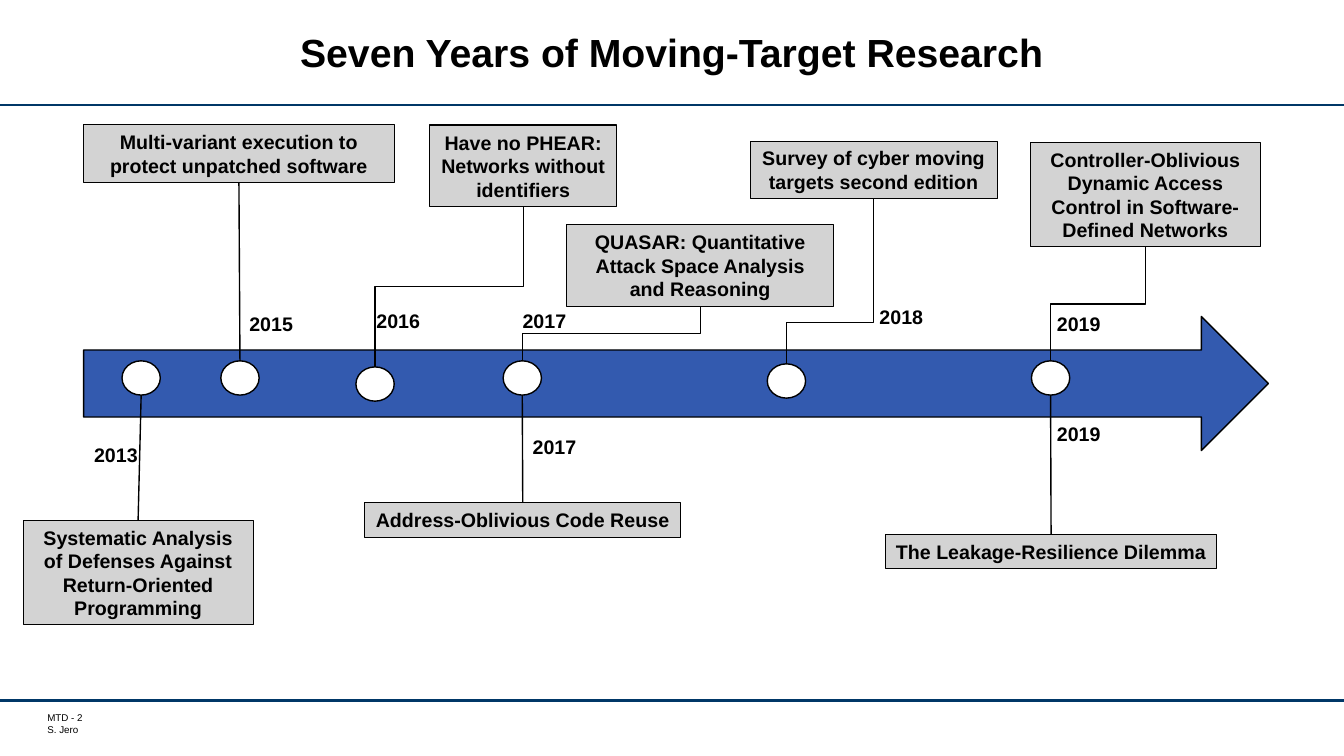
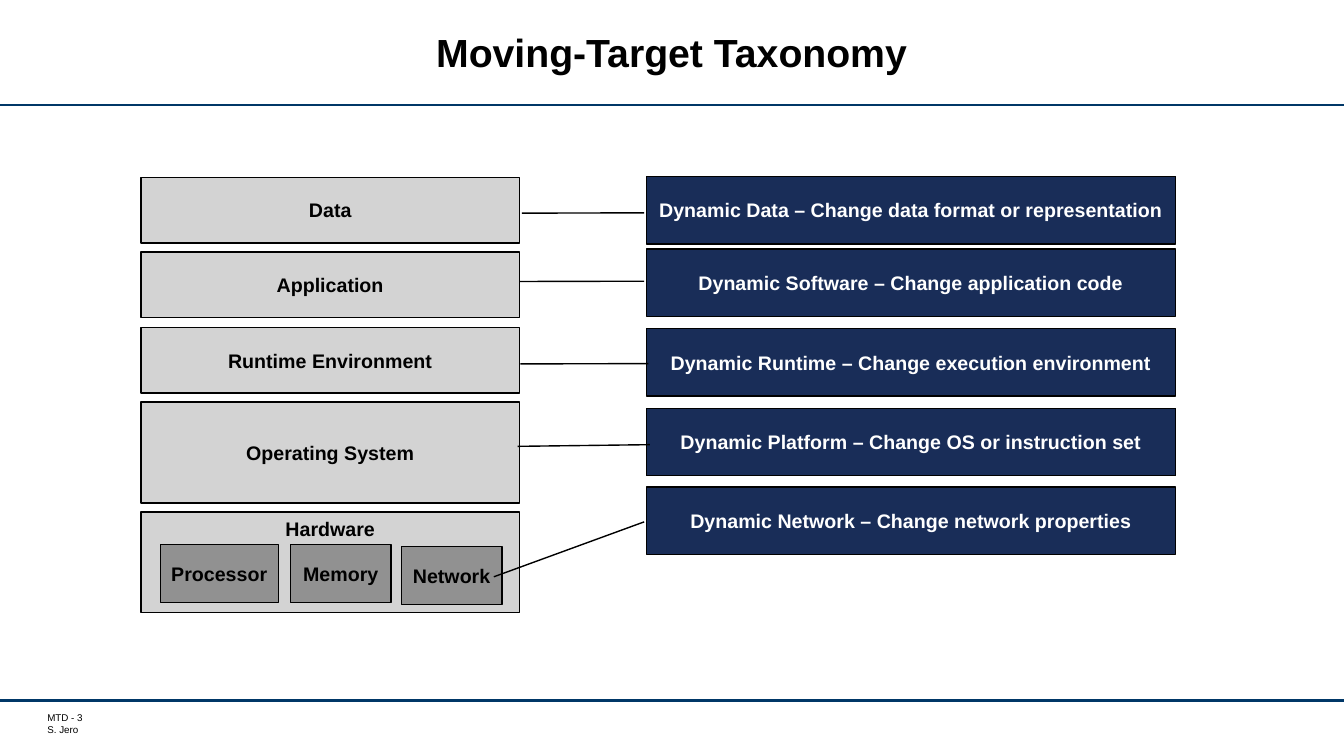
from lxml import etree
from pptx import Presentation
from pptx.dml.color import RGBColor
from pptx.enum.shapes import MSO_CONNECTOR, MSO_SHAPE
from pptx.enum.text import MSO_ANCHOR, MSO_AUTO_SIZE, PP_ALIGN
from pptx.oxml.ns import qn
from pptx.util import Inches, Pt

BLACK = RGBColor(0x00, 0x00, 0x00)
WHITE = RGBColor(0xFF, 0xFF, 0xFF)
RULE_BLUE = RGBColor(0x00, 0x37, 0x67)
ARROW_BLUE = RGBColor(0x33, 0x5A, 0xAF)
NAVY = RGBColor(0x19, 0x2D, 0x58)
LIGHT_GREY = RGBColor(0xD3, 0xD3, 0xD3)
MID_GREY = RGBColor(0x91, 0x91, 0x91)
FONT = "Arial"
PAGE_WIDTH, PAGE_HEIGHT = 13.33, 7.5

MARKER_WIDTH, MARKER_HEIGHT = 0.38, 0.34
YEAR_WIDTH, YEAR_HEIGHT = 0.64, 0.34
# Left and top of each marker
MARKERS = {
    "2013": (0.98, 2.34),
    "2015": (1.96, 2.34),
    "2016": (3.3, 2.4),
    "2017": (4.76, 2.34),
    "2018": (7.38, 2.37),
    "2019": (10, 2.34),
}
# Year, text, box, place of the year label, share of the drop above the bend
EVENTS = [
    ("2013", "Systematic Analysis of Defenses Against Return-Oriented Programming",
     (0, 3.92, 2.28, 1.04), (0.6, 3.1), 0.5),
    ("2015", "Multi-variant execution to protect unpatched software",
     (0.6, 0, 3.08, 0.57), (2.14, 1.81), 0.5),
    ("2016", "Have no PHEAR: Networks without identifiers",
     (4.03, 0, 1.86, 0.81), (3.4, 1.78), 0.5),
    ("2017", "QUASAR: Quantitative Attack Space Analysis and Reasoning",
     (5.39, 0.99, 2.65, 0.81), (4.85, 1.78), 0.5),
    ("2017", "Address-Oblivious Code Reuse",
     (3.39, 3.75, 3.13, 0.34), (4.95, 3.03), 0.5),
    ("2018", "Survey of cyber moving targets second edition",
     (7.21, 0.16, 2.45, 0.57), (8.39, 1.74), 0.75),
    ("2019", "Controller-Oblivious Dynamic Access Control in Software-Defined Networks",
     (9.99, 0.17, 2.28, 1.04), (10.15, 1.81), 0.5),
    ("2019", "The Leakage-Resilience Dilemma",
     (8.55, 4.06, 3.29, 0.34), (10.15, 2.9), 0.5),
]

# Text, top, height
LAYERS = [
    ("Data", 0.01, 0.65),
    ("Application", 0.75, 0.65),
    ("Runtime Environment", 1.5, 0.65),
    ("Operating System", 2.24, 1),
    ("Hardware", 3.33, 1),
]
# Text, left, top, width
HARDWARE_PARTS = [
    ("Processor", 0.19, 3.65, 1.17),
    ("Memory", 1.48, 3.65, 1),
    ("Network", 2.58, 3.67, 1),
]
# Text, top, leader as (start y, start x, end y, end x) in shares of the box
TECHNIQUES = [
    ("Dynamic Data – Change data format or representation", 0,
     (0.54, -0.004, 0.545, -0.235)),
    ("Dynamic Software – Change application code", 0.72,
     (0.478, -0.004, 0.482, -0.24)),
    ("Dynamic Runtime – Change execution environment", 1.51,
     (0.519, 0.004, 0.524, -0.238)),
    ("Dynamic Platform – Change OS or instruction set", 2.3,
     (0.54, 0.007, 0.565, -0.243)),
    ("Dynamic Network – Change network properties", 3.08,
     (0.519, -0.004, 1.332, -0.288)),
]


def write(para, text, size=14, color=BLACK, bold=True, align=PP_ALIGN.CENTER):
    para.alignment = align
    span = para.add_run()
    span.text = text
    span.font.name = FONT
    span.font.size = Pt(size)
    span.font.bold = bold
    span.font.color.rgb = color


def add_box(page, kind, box, fill, text="", color=BLACK, weight=1, wrap=True):
    shape = page.shapes.add_shape(kind, *map(Inches, box))
    shape.shadow.inherit = False
    shape.fill.solid()
    shape.fill.fore_color.rgb = fill
    shape.line.color.rgb = BLACK
    shape.line.width = Pt(weight)
    if text:
        frame = shape.text_frame
        frame.word_wrap = wrap
        frame.vertical_anchor = MSO_ANCHOR.MIDDLE
        write(frame.paragraphs[0], text, color=color)
    return shape


def add_line(page, kind, start, end, color=BLACK, weight=1):
    line = page.shapes.add_connector(kind, *map(Inches, start + end))
    line.line.color.rgb = color
    line.line.width = Pt(weight)
    etree.SubElement(line._element.spPr, qn("a:effectLst"))
    return line


def add_elbow(page, start, end, bend):
    """Draw a line that drops, runs left and drops again."""
    run, drop = start[0] - end[0], end[1] - start[1]
    left = (start[0] + end[0] - drop) / 2
    top = (start[1] + end[1] - run) / 2
    elbow = add_line(page, MSO_CONNECTOR.ELBOW, (left, top), (left + drop, top + run))
    properties = elbow._element.spPr
    properties.find(qn("a:xfrm")).set("rot", str(90 * 60000))
    adjustments = properties.find(qn("a:prstGeom")).find(qn("a:avLst"))
    guide = etree.SubElement(adjustments, qn("a:gd"))
    guide.set("name", "adj1")
    guide.set("fmla", f"val {round(bend * 100000)}")


def add_page(deck, title, number):
    """Add a slide with the shared title, rules and footer."""
    page = deck.slides.add_slide(deck.slide_layouts[5])
    heading = page.shapes.title
    heading.left, heading.top = Inches(1.37), Inches(0.11)
    heading.width, heading.height = Inches(10.58), Inches(0.89)
    frame = heading.text_frame
    frame.auto_size = MSO_AUTO_SIZE.NONE
    frame.vertical_anchor = MSO_ANCHOR.MIDDLE
    frame.paragraphs[0].line_spacing = Pt(28)
    write(frame.paragraphs[0], title, size=28)

    for top in (1.04, 6.95):
        add_line(page, MSO_CONNECTOR.STRAIGHT, (0, top), (PAGE_WIDTH, top),
                 RULE_BLUE, 1.75)

    footer = page.shapes.add_textbox(
        Inches(0.47), Inches(7.06), Inches(1.59), Inches(0.24)).text_frame
    footer.word_wrap = True
    footer.margin_left = footer.margin_right = 0
    footer.margin_top = footer.margin_bottom = 0
    footer_style = {"size": 7, "bold": False, "align": PP_ALIGN.LEFT}
    write(footer.paragraphs[0], f"MTD - {number}", **footer_style)
    write(footer.add_paragraph(), "S. Jero", **footer_style)
    return page


def add_event(page, left, top, year, text, box, label, bend):
    """Add an event box, its year and its link to the marker."""
    x, y, width, height = left + box[0], top + box[1], box[2], box[3]
    add_box(page, MSO_SHAPE.RECTANGLE, (x, y, width, height), LIGHT_GREY, text,
            weight=0.75, wrap=height > 0.5)

    year_box = page.shapes.add_textbox(
        Inches(left + label[0]), Inches(top + label[1]),
        Inches(YEAR_WIDTH), Inches(YEAR_HEIGHT))
    year_box.text_frame.word_wrap = False
    write(year_box.text_frame.paragraphs[0], year)

    marker_x = left + MARKERS[year][0] + MARKER_WIDTH / 2
    marker_y = top + MARKERS[year][1]
    center = x + width / 2
    if y > marker_y:
        add_line(page, MSO_CONNECTOR.STRAIGHT,
                 (marker_x, marker_y + MARKER_HEIGHT), (center, y))
    elif abs(center - marker_x) < 0.1:
        add_line(page, MSO_CONNECTOR.STRAIGHT,
                 (center, y + height), (marker_x, marker_y))
    else:
        add_elbow(page, (center, y + height), (marker_x, marker_y), bend)


def add_timeline(page, left, top):
    add_box(page, MSO_SHAPE.RIGHT_ARROW, (left + 0.6, top + 1.9, 11.75, 1.33),
            ARROW_BLUE)
    for x, y in MARKERS.values():
        add_box(page, MSO_SHAPE.OVAL,
                (left + x, top + y, MARKER_WIDTH, MARKER_HEIGHT), WHITE)
    for event in EVENTS:
        add_event(page, left, top, *event)


def add_layers(page, left, top):
    for text, y, height in LAYERS:
        layer = add_box(page, MSO_SHAPE.RECTANGLE, (left, top + y, 3.75, height),
                        LIGHT_GREY, text)
    # The last layer, the hardware, holds its parts below its name
    layer.text_frame.vertical_anchor = MSO_ANCHOR.TOP
    for text, x, y, width in HARDWARE_PARTS:
        add_box(page, MSO_SHAPE.RECTANGLE, (left + x, top + y, width, 0.58),
                MID_GREY, text)


def add_techniques(page, left, top):
    for text, y, leader in TECHNIQUES:
        callout = add_box(page, MSO_SHAPE.LINE_CALLOUT_1,
                          (left, top + y, 5.25, 0.67), NAVY, text, WHITE)
        for index, share in enumerate(leader):
            callout.adjustments[index] = share


def main():
    deck = Presentation()
    deck.slide_width, deck.slide_height = Inches(PAGE_WIDTH), Inches(PAGE_HEIGHT)

    add_timeline(add_page(deck, "Seven Years of Moving-Target Research", 2), 0.23, 1.24)

    taxonomy = add_page(deck, "Moving-Target Taxonomy", 3)
    add_layers(taxonomy, 1.4, 1.75)
    add_techniques(taxonomy, 6.41, 1.75)

    deck.save("out.pptx")


if __name__ == "__main__":
    main()
